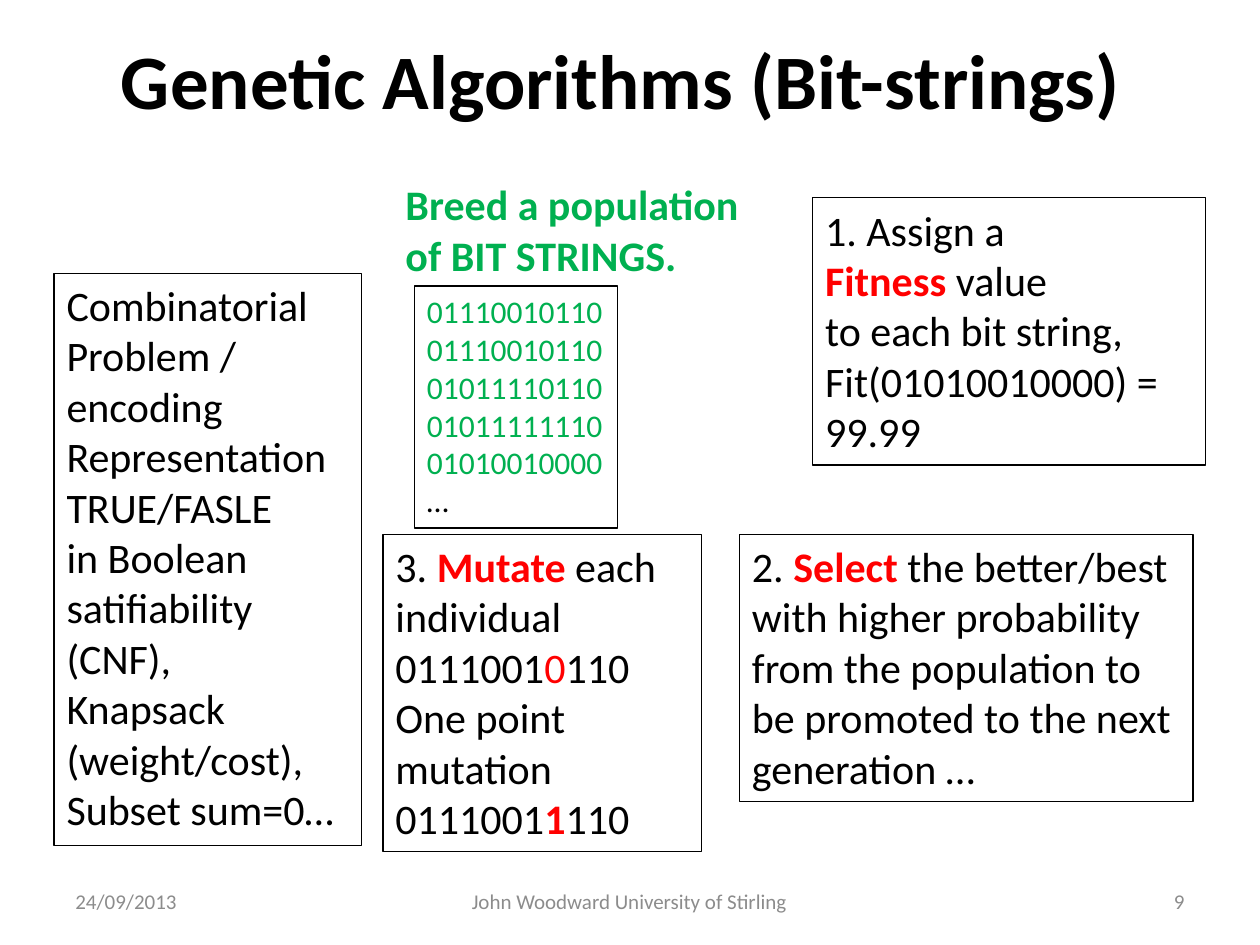
from pptx import Presentation
from pptx.dml.color import RGBColor
from pptx.enum.text import MSO_ANCHOR as Anchor, MSO_AUTO_SIZE as AutoSize, PP_ALIGN as Align
from pptx.util import Emu, Pt

PX = 9144
BLACK = RGBColor(0x00, 0x00, 0x00)
RED = RGBColor(0xFF, 0x00, 0x00)
GREEN = RGBColor(0x00, 0xB0, 0x50)
GREY = RGBColor(0x8C, 0x8C, 0x8C)
FONT = "Calibri"


def px(*lengths):
    """Turn px lengths into EMU."""
    return [Emu(length * PX) for length in lengths]


def style_font(font, size, color, bold=False):
    """Set the face, size, colour and weight of a font."""
    font.name, font.size, font.bold = FONT, Pt(size), bold
    font.color.rgb = color


def add_text(slide, box, lines, size=24, color=BLACK, bold=False, wrap=True, align=Align.LEFT):
    """Add a text box; each line is a string or a list of (text, colour, bold) runs."""
    shape = slide.shapes.add_textbox(*px(*box))
    frame = shape.text_frame
    frame.word_wrap = wrap
    for index, line in enumerate(lines):
        paragraph = frame.paragraphs[0] if index == 0 else frame.add_paragraph()
        paragraph.alignment = align
        style_font(paragraph.font, size, color, bold)
        runs = [(line, color, bold)] if isinstance(line, str) else line
        for text, run_color, run_bold in runs:
            run = paragraph.add_run()
            run.text = text
            style_font(run.font, size, run_color, run_bold)
    return shape


def add_panel(slide, box, lines, **options):
    """Add a text box that has a thin black outline."""
    shape = add_text(slide, box, lines, **options)
    shape.text_frame.auto_size = AutoSize.SHAPE_TO_FIT_TEXT
    shape.line.color.rgb = BLACK
    shape.line.width = Pt(0.75)


def marked(before, mark, after, bold=True):
    """Return the runs of a line with one red part."""
    runs = [(before, BLACK, False), (mark, RED, bold), (after, BLACK, False)]
    return [run for run in runs if run[0]]


def add_title(slide, box, text):
    """Place and format the title placeholder."""
    title = slide.shapes.title
    title.left, title.top, title.width, title.height = px(*box)
    frame = title.text_frame
    frame.text = text
    frame.vertical_anchor = Anchor.MIDDLE
    paragraph = frame.paragraphs[0]
    paragraph.alignment = Align.CENTER
    style_font(paragraph.font, 44, BLACK, True)


def add_population(slide, left, top):
    """Add the green heading and the list of bit strings below it."""
    heading = ["Breed a population", "of BIT STRINGS."]
    add_text(slide, (left, top, 287, 91), heading, color=GREEN, bold=True, wrap=False)
    strings = ["01110010110", "01110010110", "01011110110", "01011111110", "01010010000"]
    add_panel(slide, (left + 17, top + 90, 161, 192), [*strings, [("…", BLACK, False)]],
              size=18, color=GREEN, wrap=False)


def add_footer(slide, left, top, width):
    """Add the date, the author and the slide number along one row."""
    side, middle, height = 233, 317, 40
    parts = [
        (left, side, "24/09/2013", Align.LEFT),
        (left + (width - middle) // 2, middle, "John Woodward University of Stirling", Align.CENTER),
        (left + width - side, side, "9", Align.RIGHT),
    ]
    for part_left, part_width, text, align in parts:
        shape = add_text(slide, (part_left, top, part_width, height), [text],
                         size=12, color=GREY, align=align)
        shape.text_frame.vertical_anchor = Anchor.MIDDLE


def main():
    """Build and save the slide."""
    presentation = Presentation()
    presentation.slide_width, presentation.slide_height = px(1000, 750)
    slide = presentation.slides.add_slide(presentation.slide_layouts[5])
    add_title(slide, (0, 0, 1000, 125), "Genetic Algorithms (Bit-strings) ")
    add_population(slide, 312, 137)
    add_panel(slide, (587, 424, 360, 212), [
        marked("2. ", "Select ", "the better/best with higher probability "
               "from the population to be promoted to the next generation …"),
    ])
    add_panel(slide, (304, 424, 253, 252), [
        marked("3. ", "Mutate ", "each individual"),
        marked("0111001", "0", "110", bold=False),
        "One point mutation",
        marked("0111001", "1", "110"),
    ])
    add_panel(slide, (645, 157, 312, 212), [
        "1. Assign a",
        marked("", "Fitness ", "value"),
        "to each bit string, Fit(01010010000) = 99.99",
    ])
    add_panel(slide, (43, 217, 244, 454), [
        "Combinatorial Problem / encoding",
        "Representation",
        "TRUE/FASLE",
        "in Boolean satifiability (CNF),",
        "Knapsack (weight/cost),",
        "Subset sum=0…",
    ])
    add_footer(slide, 50, 695, 900)
    presentation.save("out.pptx")


if __name__ == "__main__":
    main()
